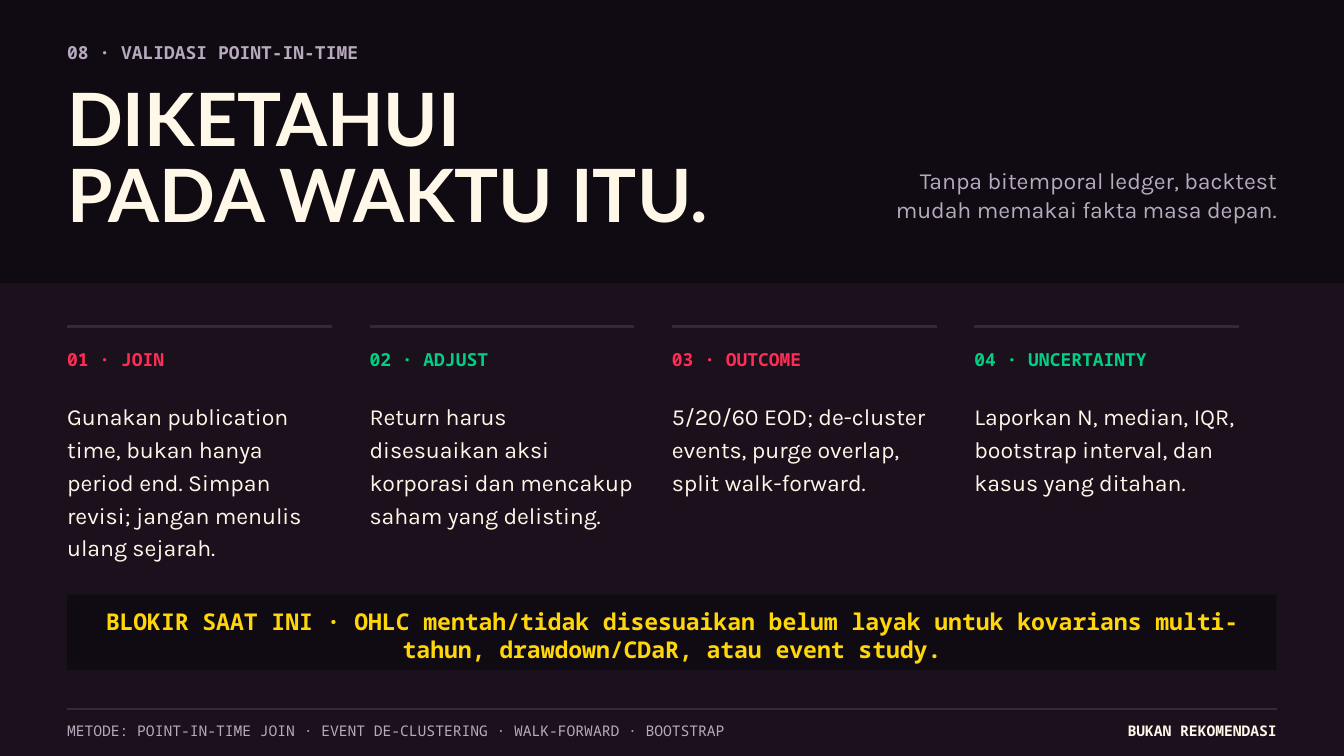
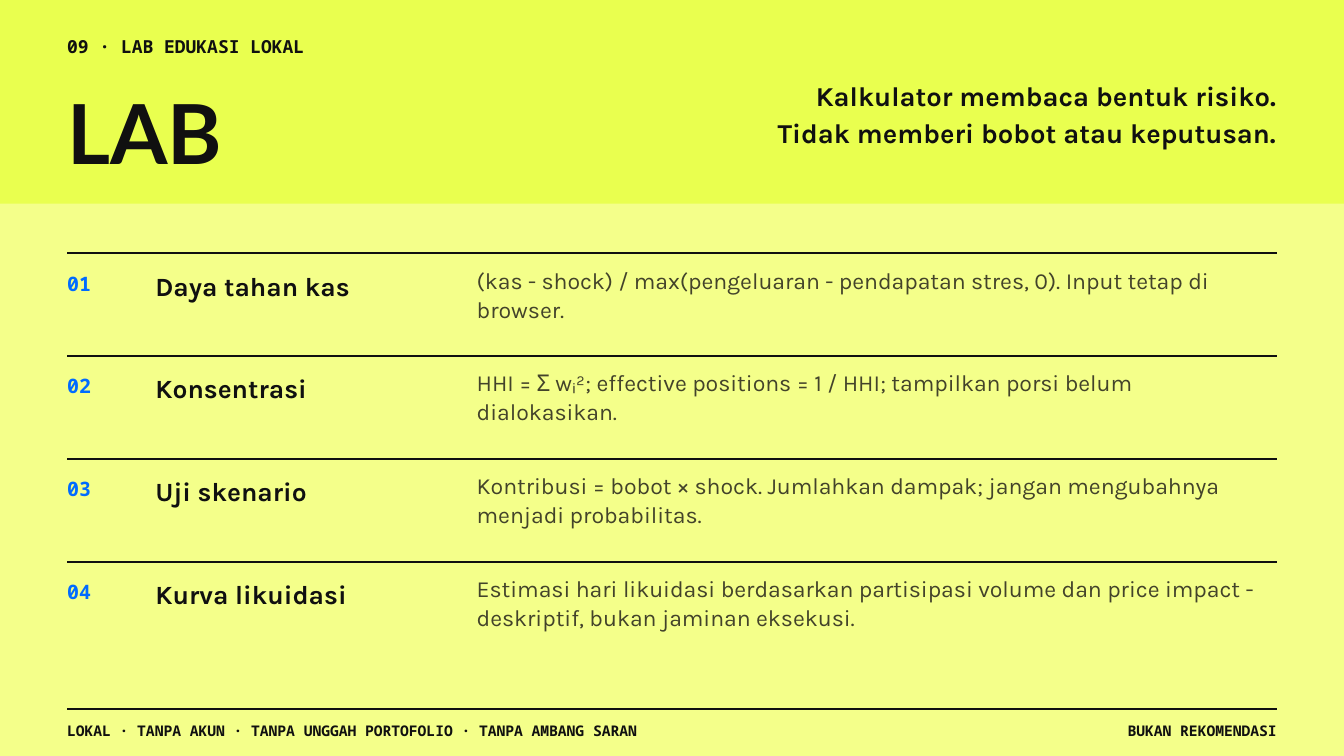
from pptx import Presentation
from pptx.dml.color import RGBColor
from pptx.enum import shapes, text
from pptx.oxml.ns import qn
from pptx.util import Pt

SANS, HEAD, MONO = "Karla", "Lato", "Noto Sans Mono"
LEFT, CENTER, RIGHT = text.PP_ALIGN.LEFT, text.PP_ALIGN.CENTER, text.PP_ALIGN.RIGHT

BLACK = RGBColor(0x10, 0x0B, 0x12)
PLUM = RGBColor(0x1B, 0x11, 0x1C)
PLUM_LINE = RGBColor(0x3A, 0x26, 0x3A)
MAUVE = RGBColor(0xB8, 0xAA, 0xBE)
CREAM = RGBColor(0xFF, 0xF7, 0xE8)
RED = RGBColor(0xFF, 0x2D, 0x55)
GREEN = RGBColor(0x00, 0xD0, 0x84)
YELLOW = RGBColor(0xFF, 0xD6, 0x0A)
LIME = RGBColor(0xE9, 0xFF, 0x4F)
PALE_LIME = RGBColor(0xF4, 0xFF, 0x8A)
INK = RGBColor(0x10, 0x10, 0x10)
OLIVE = RGBColor(0x43, 0x43, 0x2A)
BLUE = RGBColor(0x00, 0x6B, 0xFF)

SLIDE_WIDTH, SLIDE_HEIGHT = 960, 540
MARGIN = 48
CONTENT_WIDTH = SLIDE_WIDTH - 2 * MARGIN
RULE_WEIGHT = 1.5

VALIDATION = {
    "background": PLUM, "band": BLACK, "band_height": 202.5, "rule": PLUM_LINE,
    "eyebrow": "08 · VALIDASI POINT-IN-TIME", "eyebrow_top": 28.5, "eyebrow_color": MAUVE,
    "title": "DIKETAHUI\nPADA WAKTU ITU.", "title_box": (MARGIN, 61.5, 780, 116),
    "title_size": 52.5, "title_spacing": 0.86, "title_color": CREAM,
    "footer": "METODE: POINT-IN-TIME JOIN · EVENT DE-CLUSTERING · WALK-FORWARD · BOOTSTRAP",
    "footer_color": MAUVE, "footer_bold": False,
}
VALIDATION_LEAD = "Tanpa bitemporal ledger, backtest mudah memakai fakta masa depan."
STEPS = [
    ("01 · JOIN", RED, "Gunakan publication time, bukan hanya period end. "
                       "Simpan revisi; jangan menulis ulang sejarah."),
    ("02 · ADJUST", GREEN, "Return harus disesuaikan aksi korporasi dan mencakup "
                           "saham yang delisting."),
    ("03 · OUTCOME", RED, "5/20/60 EOD; de-cluster events, purge overlap, split walk-forward."),
    ("04 · UNCERTAINTY", GREEN, "Laporkan N, median, IQR, bootstrap interval, dan "
                                "kasus yang ditahan."),
]
BLOCKER = ("BLOKIR SAAT INI · OHLC mentah/tidak disesuaikan belum layak untuk kovarians "
           "multi-tahun, drawdown/CDaR, atau event study.")

LAB = {
    "background": PALE_LIME, "band": LIME, "band_height": 145.5, "rule": INK,
    "eyebrow": "09 · LAB EDUKASI LOKAL", "eyebrow_top": 24, "eyebrow_color": INK,
    "title": "LAB", "title_box": (MARGIN, 51, 270, 78),
    "title_size": 59.1, "title_spacing": 1.1, "title_color": INK,
    "footer": "LOKAL · TANPA AKUN · TANPA UNGGAH PORTOFOLIO · TANPA AMBANG SARAN",
    "footer_color": INK, "footer_bold": True,
}
LAB_LEAD = "Kalkulator membaca bentuk risiko.\nTidak memberi bobot atau keputusan."
TOOLS = [
    ("Daya tahan kas", "(kas - shock) / max(pengeluaran - pendapatan stres, 0). "
                       "Input tetap di browser."),
    ("Konsentrasi", "HHI = Σ wᵢ²; effective positions = 1 / HHI; "
                    "tampilkan porsi belum dialokasikan."),
    ("Uji skenario", "Kontribusi = bobot × shock. Jumlahkan dampak; "
                     "jangan mengubahnya menjadi probabilitas."),
    ("Kurva likuidasi", "Estimasi hari likuidasi berdasarkan partisipasi volume dan price "
                        "impact - deskriptif, bukan jaminan eksekusi."),
]


def write(shape, content, font, size, color, bold=False, align=LEFT, spacing=1.1):
    frame = shape.text_frame
    frame.text = content
    frame.word_wrap = True
    frame.auto_size = text.MSO_AUTO_SIZE.NONE
    frame.vertical_anchor = text.MSO_ANCHOR.TOP
    frame.margin_left = frame.margin_top = frame.margin_right = frame.margin_bottom = 0
    for paragraph in frame.paragraphs:
        paragraph.alignment = align
        paragraph.line_spacing = spacing
        for run in paragraph.runs:
            run.font.name = font
            run.font.size = Pt(size)
            run.font.bold = bold
            run.font.color.rgb = color


def add_text(slide, box, content, font, size, color, **style):
    shape = slide.shapes.add_textbox(*map(Pt, box))
    write(shape, content, font, size, color, **style)


def add_block(slide, box, color):
    shape = slide.shapes.add_shape(shapes.MSO_SHAPE.RECTANGLE, *map(Pt, box))
    shape.shadow.inherit = False
    shape.fill.solid()
    shape.fill.fore_color.rgb = color
    shape.line.fill.background()
    return shape


def add_rule(slide, left, top, width, color):
    middle = Pt(top + RULE_WEIGHT / 2)
    rule = slide.shapes.add_connector(
        shapes.MSO_CONNECTOR.STRAIGHT, Pt(left), middle, Pt(left + width), middle)
    rule.line.color.rgb = color
    rule.line.width = Pt(RULE_WEIGHT)
    properties = rule.element.spPr
    properties.append(properties.makeelement(qn("a:effectLst"), {}))


def add_page(presentation, page):
    slide = presentation.slides.add_slide(presentation.slide_layouts[5])
    slide.background.fill.solid()
    slide.background.fill.fore_color.rgb = page["background"]
    title = slide.shapes.title
    band = add_block(slide, (0, 0, SLIDE_WIDTH, page["band_height"]), page["band"])
    title.element.addprevious(band.element)
    title.left, title.top, title.width, title.height = map(Pt, page["title_box"])
    write(title, page["title"], HEAD, page["title_size"], page["title_color"],
          bold=True, spacing=page["title_spacing"])
    add_text(slide, (MARGIN, page["eyebrow_top"], 390, 18), page["eyebrow"],
             MONO, 12.8, page["eyebrow_color"], bold=True)
    add_rule(slide, MARGIN, 505.5, CONTENT_WIDTH, page["rule"])
    add_text(slide, (MARGIN, 514.5, 690, 15), page["footer"], MONO, 10.5,
             page["footer_color"], bold=page["footer_bold"])
    add_text(slide, (750, 514.5, 162, 15), "BUKAN REKOMENDASI", MONO, 10.5,
             page["title_color"], bold=True, align=RIGHT)
    return slide


def build_validation(presentation):
    slide = add_page(presentation, VALIDATION)
    add_text(slide, (604.5, 117, 307.5, 55.5), VALIDATION_LEAD, SANS, 16.5, MAUVE,
             align=RIGHT, spacing=1.08)
    pitch = CONTENT_WIDTH / len(STEPS)
    width = pitch - 27
    for index, (label, color, detail) in enumerate(STEPS):
        left = MARGIN + index * pitch
        add_rule(slide, left, 232.5, width, PLUM_LINE)
        add_text(slide, (left, 247.5, width, 21), label, MONO, 12.8, color, bold=True)
        add_text(slide, (left, 283.5, width, 123), detail, SANS, 16.5, CREAM, spacing=1.19)
    add_block(slide, (MARGIN, 424.5, CONTENT_WIDTH, 54), BLACK)
    add_text(slide, (MARGIN + 15, 433.5, CONTENT_WIDTH - 30, 36), BLOCKER, MONO, 16.5,
             YELLOW, bold=True, align=CENTER, spacing=1.02)


def build_lab(presentation):
    slide = add_page(presentation, LAB)
    add_text(slide, (442.5, 54, 469.5, 63), LAB_LEAD, SANS, 19.5, INK,
             bold=True, align=RIGHT, spacing=1.12)
    for index, (name, detail) in enumerate(TOOLS):
        top = 180 + index * 73.5
        add_rule(slide, MARGIN, top, CONTENT_WIDTH, INK)
        add_text(slide, (MARGIN, top + 12, 54, 22.5), f"{index + 1:02}", MONO, 14.2, BLUE,
                 bold=True)
        add_text(slide, (111, top + 10.5, 217.5, 33), name, SANS, 18.8, INK, bold=True)
        add_text(slide, (340.5, top + 9, 571.5, 51), detail, SANS, 16.5, OLIVE, spacing=1.05)


def main():
    presentation = Presentation()
    presentation.slide_width = Pt(SLIDE_WIDTH)
    presentation.slide_height = Pt(SLIDE_HEIGHT)
    build_validation(presentation)
    build_lab(presentation)
    presentation.save("out.pptx")


if __name__ == "__main__":
    main()
